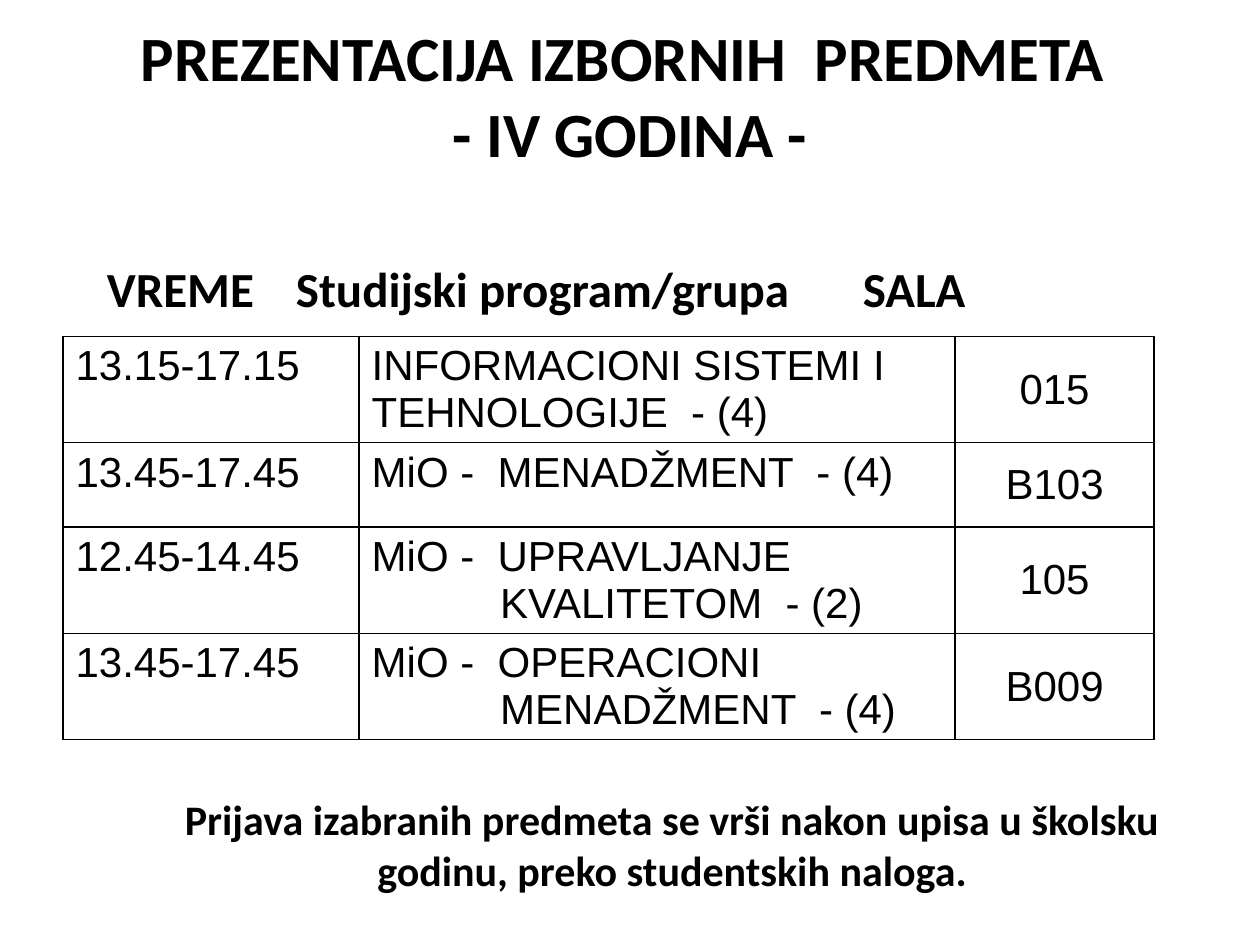
"""Build the timetable slide for the presentation of fourth-year elective courses."""
import pptx
import pptx.util
import pptx.dml.color
import pptx.enum.text
import pptx.oxml
import pptx.oxml.ns
from lxml import etree

Inches, Pt = pptx.util.Inches, pptx.util.Pt
ALIGN, ANCHOR = pptx.enum.text.PP_ALIGN, pptx.enum.text.MSO_ANCHOR
qn = pptx.oxml.ns.qn

BLACK = "000000"
TITLE = "PREZENTACIJA IZBORNIH  PREDMETA \v- IV GODINA -"
HEADINGS = ("VREME", "\tStudijski program/grupa", "\t\tSALA")
NOTE = "Prijava izabranih predmeta se vrši nakon upisa u školsku godinu, preko studentskih naloga."
SCHEDULE = [
    ("13.15-17.15", ["INFORMACIONI SISTEMI I TEHNOLOGIJE  - (4)"], "015"),
    ("13.45-17.45", ["MiO -  MENADŽMENT  - (4)"], "B103"),
    ("12.45-14.45", ["MiO -  UPRAVLJANJE", "KVALITETOM  - (2)"], "105"),
    ("13.45-17.45", ["MiO -  OPERACIONI", "MENADŽMENT  - (4)"], "B009"),
]
COLUMNS = (2.35, 4.73, 1.58)
ROWS = (0.84, 0.67, 0.84, 0.84)
CONTINUATION_INDENT = 1.02


def rgb(value):
    return pptx.dml.color.RGBColor.from_string(value)


def style(p, size, font="Calibri", bold=True, align=ALIGN.CENTER):
    p.alignment = align
    p.font.size, p.font.name, p.font.bold = Pt(size), font, bold
    p.font.color.rgb = rgb(BLACK)


def add_text(s, box, text, size, align, wrap):
    tf = s.shapes.add_textbox(*map(Inches, box)).text_frame
    tf.word_wrap = wrap
    tf.text = text
    style(tf.paragraphs[0], size, align=align)


def add_borders(cell):
    props = cell._tc.get_or_add_tcPr()
    for index, side in enumerate(("lnL", "lnR", "lnT", "lnB")):
        line = etree.Element(qn("a:" + side), w=str(Pt(1)))
        fill = etree.SubElement(line, qn("a:solidFill"))
        etree.SubElement(fill, qn("a:srgbClr"), val=BLACK)
        props.insert(index, line)


def fill_cell(cell, lines, centred):
    cell.fill.background()
    add_borders(cell)
    cell.vertical_anchor = ANCHOR.MIDDLE if centred else ANCHOR.TOP
    tf = cell.text_frame
    tf.text = "\n".join(lines)
    for i, p in enumerate(tf.paragraphs):
        style(p, 24, "Arial", False, ALIGN.CENTER if centred else ALIGN.LEFT)
        if i:
            p._p.get_or_add_pPr().set("marL", str(Inches(CONTINUATION_INDENT)))


def add_schedule(s):
    frame = s.shapes.add_table(len(ROWS), len(COLUMNS), Inches(0.5), Inches(2.67),
                               Inches(sum(COLUMNS)), Inches(sum(ROWS)))
    table = frame.table
    table.first_row = table.horz_banding = False
    for column, width in zip(table.columns, COLUMNS):
        column.width = Inches(width)
    for row, height, (time, programme, room) in zip(table.rows, ROWS, SCHEDULE):
        row.height = Inches(height)
        for i, lines in enumerate(([time], programme, [room])):
            fill_cell(row.cells[i], lines, centred=i == 2)


def main():
    prs = pptx.Presentation()
    prs.slide_width, prs.slide_height = Inches(10), Inches(7.5)
    s = prs.slides.add_slide(prs.slide_layouts[5])
    title = s.shapes.title
    title.left, title.top, title.width, title.height = map(Inches, (0, 0, 10, 1.5))
    title.text_frame.text = TITLE
    title.text_frame.vertical_anchor = ANCHOR.MIDDLE
    style(title.text_frame.paragraphs[0], 36)
    add_schedule(s)
    add_text(s, (1.17, 6.25, 8.33, 0.91), NOTE, 24, ALIGN.CENTER, True)
    add_text(s, (0.75, 2, 8.09, 0.57), "".join(HEADINGS), 28, ALIGN.LEFT, False)
    prs.save("out.pptx")


if __name__ == "__main__":
    main()
